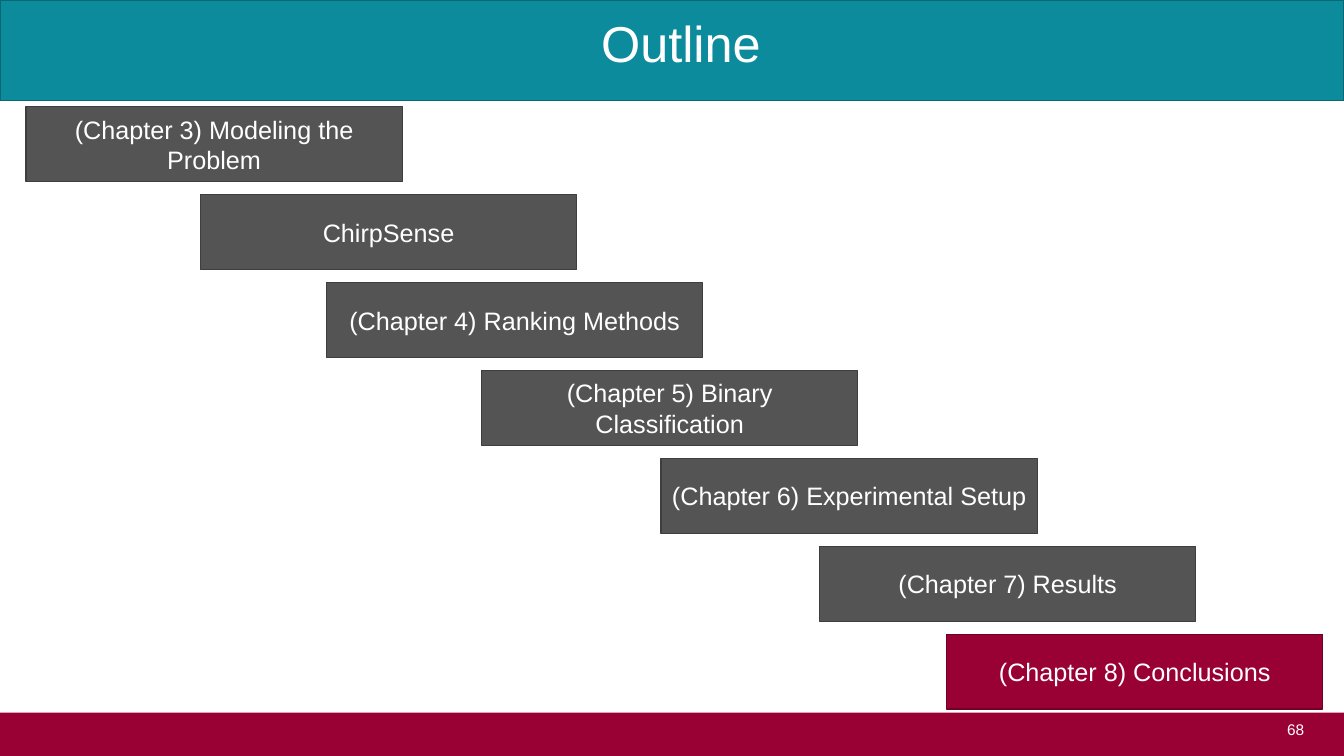
from dataclasses import dataclass

from pptx import Presentation
from pptx.dml.color import RGBColor
from pptx.enum.shapes import MSO_SHAPE as SHAPE
from pptx.enum.text import MSO_ANCHOR as ANCHOR, PP_ALIGN as ALIGN
from pptx.util import Pt

TEAL, CRIMSON, GRAY, WHITE = "0C8B9C", "990033", "545454", "FFFFFF"
EDGES = {TEAL: "096773", CRIMSON: "710026", GRAY: "3E3E3E"}
SLIDE_W, SLIDE_H = 960, 540
STEP_W, STEP_H = 268.7, 53.5
FIRST_TOP, STEP_PITCH = 76.2, 62.8


@dataclass
class Box:
    left: float
    top: float
    width: float
    height: float

    def pts(self) -> list:
        return [Pt(v) for v in (self.left, self.top, self.width, self.height)]


@dataclass
class Step:
    text: str
    left: float
    fill: str = GRAY


STEPS = [
    Step("(Chapter 3) Modeling the Problem", 18.6),
    Step("ChirpSense", 143.2),
    Step("(Chapter 4) Ranking Methods", 233.2),
    Step("(Chapter 5) Binary Classification", 344),
    Step("(Chapter 6) Experimental Setup", 472.2),
    Step("(Chapter 7) Results", 585.4),
    Step("(Chapter 8) Conclusions", 676.2, CRIMSON),
]


def color(value: str) -> RGBColor:
    return RGBColor.from_string(value)


def write(s, text: str, size: float, align, anchor, **spacing) -> None:
    tf = s.text_frame
    tf.word_wrap = True
    tf.vertical_anchor = anchor
    p = tf.paragraphs[0]
    for name, value in {"alignment": align, **spacing}.items():
        setattr(p, name, value)
    r = p.add_run()
    r.text = text
    for name, value in {"name": "Arial", "size": Pt(size)}.items():
        setattr(r.font, name, value)
    r.font.color.rgb = color(WHITE)


def add_rect(sl, box: Box, fill: str, outlined: bool = True):
    s = sl.shapes.add_shape(SHAPE.RECTANGLE, *box.pts())
    s.shadow.inherit = False
    s.fill.solid()
    s.fill.fore_color.rgb = color(fill)
    if outlined:
        s.line.color.rgb = color(EDGES[fill])
        s.line.width = Pt(0.85)
    else:
        s.line.fill.background()
    return s


def add_text(sl, box: Box, text: str, size: float, align, **spacing) -> None:
    s = sl.shapes.add_textbox(*box.pts())
    write(s, text, size, align, ANCHOR.TOP, **spacing)


def main() -> None:
    prs = Presentation()
    prs.slide_width, prs.slide_height = Pt(SLIDE_W), Pt(SLIDE_H)
    sl = prs.slides.add_slide(prs.slide_layouts[6])

    # Header and footer bands
    add_rect(sl, Box(0, 0, SLIDE_W, 72), TEAL)
    add_rect(sl, Box(0, 509, SLIDE_W, 31), CRIMSON, outlined=False)
    add_text(sl, Box(818.6, 511.2, 120.2, 28.8), "68", 11, ALIGN.RIGHT)

    # Staircase of chapters
    for i, step in enumerate(STEPS):
        box = Box(step.left, FIRST_TOP + i * STEP_PITCH, STEP_W, STEP_H)
        s = add_rect(sl, box, step.fill)
        write(s, step.text, 18, ALIGN.CENTER, ANCHOR.MIDDLE)

    # Title
    add_text(sl, Box(31, 10, 910.8, 52.6), "Outline", 36, ALIGN.CENTER,
             line_spacing=0.9, space_before=Pt(12))

    prs.save("out.pptx")


if __name__ == "__main__":
    main()
